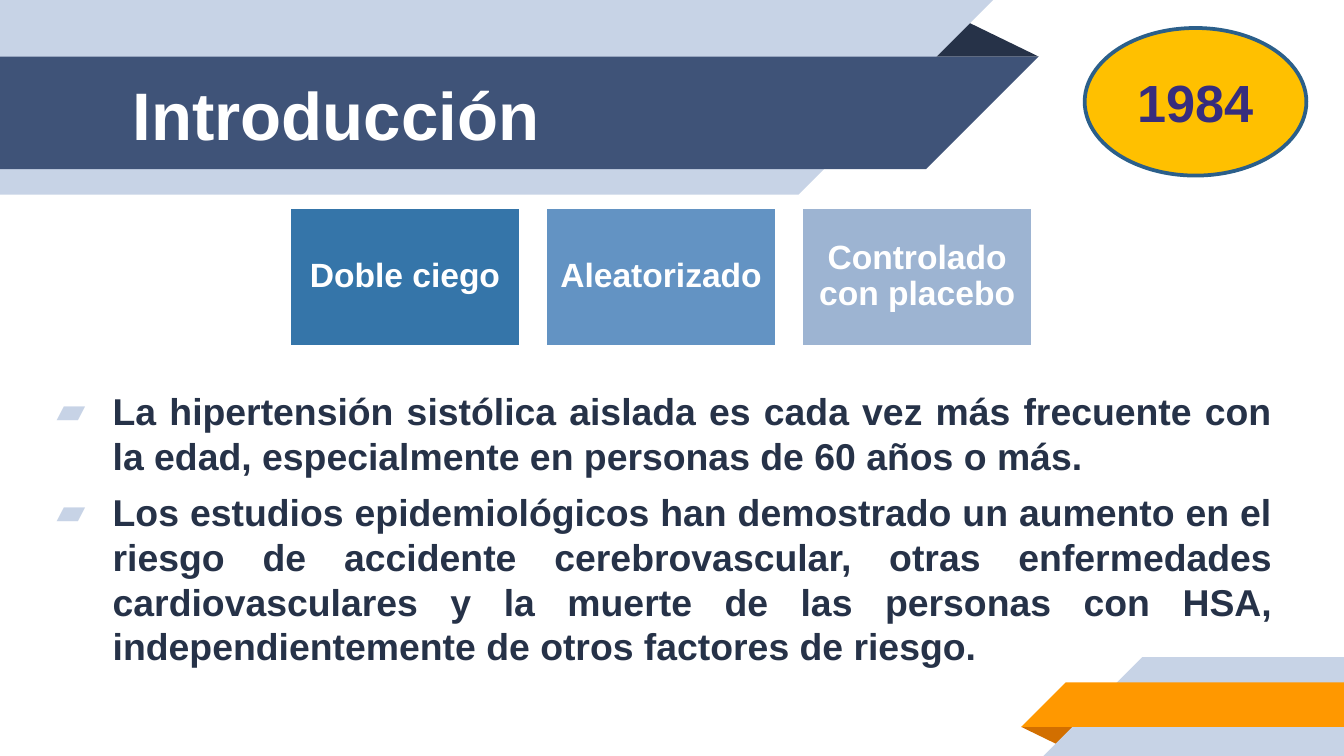
from dataclasses import dataclass

from lxml.etree import SubElement
from pptx import Presentation
from pptx.dml.color import RGBColor
from pptx.enum.shapes import MSO_SHAPE as Shape
from pptx.enum.text import MSO_ANCHOR as Anchor, MSO_AUTO_SIZE as Fit, PP_ALIGN as Align
from pptx.oxml.ns import qn
from pptx.util import Cm, Pt


@dataclass(frozen=True)
class Theme:
    """Colours, font and type sizes of the slide."""
    font: str = "Arial"
    white: str = "FFFFFF"
    ink: str = "263248"
    navy: str = "3F5378"
    pale: str = "C7D3E6"
    orange: str = "FF9800"
    rust: str = "D26F00"
    gold: str = "FFC000"
    rim: str = "2B5F8A"
    violet: str = "372D7D"
    cards: tuple = ("3575A9", "6393C3", "9DB4D2")
    title: int = 36
    badge: int = 28
    body: int = 20
    card: int = 18


THEME = Theme()
WIDE, HIGH = 25.4, 14.29
TRAITS = ("Doble ciego", "Aleatorizado", "Controlado con placebo")
POINTS = (
    "La hipertensión sistólica aislada es cada vez más frecuente con la edad, "
    "especialmente en personas de 60 años o más.",
    "Los estudios epidemiológicos han demostrado un aumento en el riesgo de "
    "accidente cerebrovascular, otras enfermedades cardiovasculares y la muerte "
    "de las personas con HSA, independientemente de otros factores de riesgo.",
)


def paint(shape, fill, line=None):
    """Give a shape a flat fill and an optional outline."""
    shape.shadow.inherit = False
    shape.fill.solid()
    shape.fill.fore_color.rgb = RGBColor.from_string(fill)
    if line:
        shape.line.color.rgb = RGBColor.from_string(line)
        shape.line.width = Pt(2)
    else:
        shape.line.fill.background()


def write(shape, *texts, size, color, align=Align.CENTER, inset=0.25,
          before=0, leading=1.0):
    """Fill a shape with bold paragraphs and return them."""
    frame = shape.text_frame
    frame.word_wrap = True
    frame.auto_size = Fit.NONE
    frame.vertical_anchor = Anchor.MIDDLE
    frame.margin_left = frame.margin_right = Cm(inset)
    frame.margin_top = frame.margin_bottom = Cm(inset)
    frame.text = "\n".join(texts)
    for para in frame.paragraphs:
        para.alignment = align
        para.space_before = Pt(before)
        para.line_spacing = leading
        font = para.runs[0].font
        font.name, font.size, font.bold = THEME.font, Pt(size), True
        font.color.rgb = RGBColor.from_string(color)
    return frame.paragraphs


def bullet(para, color):
    """Give a paragraph a hanging slanted bullet."""
    props = para._p.get_or_add_pPr()
    props.set("marL", str(Cm(1.27)))
    props.set("indent", str(-Cm(1.06)))
    SubElement(SubElement(props, qn("a:buClr")), qn("a:srgbClr"), val=color)
    SubElement(props, qn("a:buFont"), typeface=THEME.font)
    SubElement(props, qn("a:buChar"), char="▰")


def place(shape, *box):
    """Move and size a placeholder."""
    shape.left, shape.top, shape.width, shape.height = map(Cm, box)
    return shape


def band(slide, fill, *spots):
    """Draw a closed flat outline through the given spots."""
    first, *rest = [(Cm(x), Cm(y)) for x, y in spots]
    pen = slide.shapes.build_freeform(*first)
    pen.add_line_segments(rest)
    paint(pen.convert_to_shape(), fill)


def block(slide, kind, box, text, fill, line, **style):
    """Draw a preset shape with a label."""
    shape = slide.shapes.add_shape(kind, *map(Cm, box))
    paint(shape, fill, line)
    write(shape, text, **style)


def ribbons(slide):
    """Draw the folded ribbons at the top left and bottom right."""
    band(slide, THEME.ink, (17.48, 1.07), (18.17, 0.36), (19.63, 1.07))
    band(slide, THEME.pale, (0, 0), (18.77, 0), (15.09, 3.68), (0, 3.68))
    band(slide, THEME.navy, (0, 1.07), (19.63, 1.07), (17.5, 3.2), (0, 3.2))
    band(slide, THEME.rust, (19.3, 13.74), (20.4, 13.74), (20.04, 14.1))
    band(slide, THEME.pale, (21.59, 12.42), (WIDE, 12.42), (WIDE, HIGH), (19.72, HIGH))
    band(slide, THEME.orange, (20.14, 12.9), (WIDE, 12.9), (WIDE, 13.74), (19.3, 13.74))


def main():
    """Build the slide and save it."""
    deck = Presentation()
    deck.slide_width, deck.slide_height = Cm(WIDE), Cm(HIGH)
    slide = deck.slides.add_slide(deck.slide_layouts[1])
    title, body = slide.placeholders
    ribbons(slide)
    for holder in (title, body):
        slide.shapes._spTree.append(holder._element)
    write(place(title, 2.26, 1.09, 15.27, 2.13), "Introducción",
          size=THEME.title, color=THEME.white, align=Align.LEFT)
    for para in write(place(body, 0.61, 7.14, 23.7, 5.69), *POINTS, size=THEME.body,
                      color=THEME.ink, align=Align.JUSTIFY, before=6):
        bullet(para, THEME.pale)
    for i, (text, fill) in enumerate(zip(TRAITS, THEME.cards)):
        block(slide, Shape.RECTANGLE, (5.46 + 4.84 * i, 3.91, 4.39, 2.64), text, fill,
              THEME.white, size=THEME.card, color=THEME.white, inset=0.18, leading=0.9)
    block(slide, Shape.OVAL, (20.5, 0.53, 4.19, 2.79), "1984", THEME.gold, THEME.rim,
          size=THEME.badge, color=THEME.violet)
    deck.save("out.pptx")


if __name__ == "__main__":
    main()
